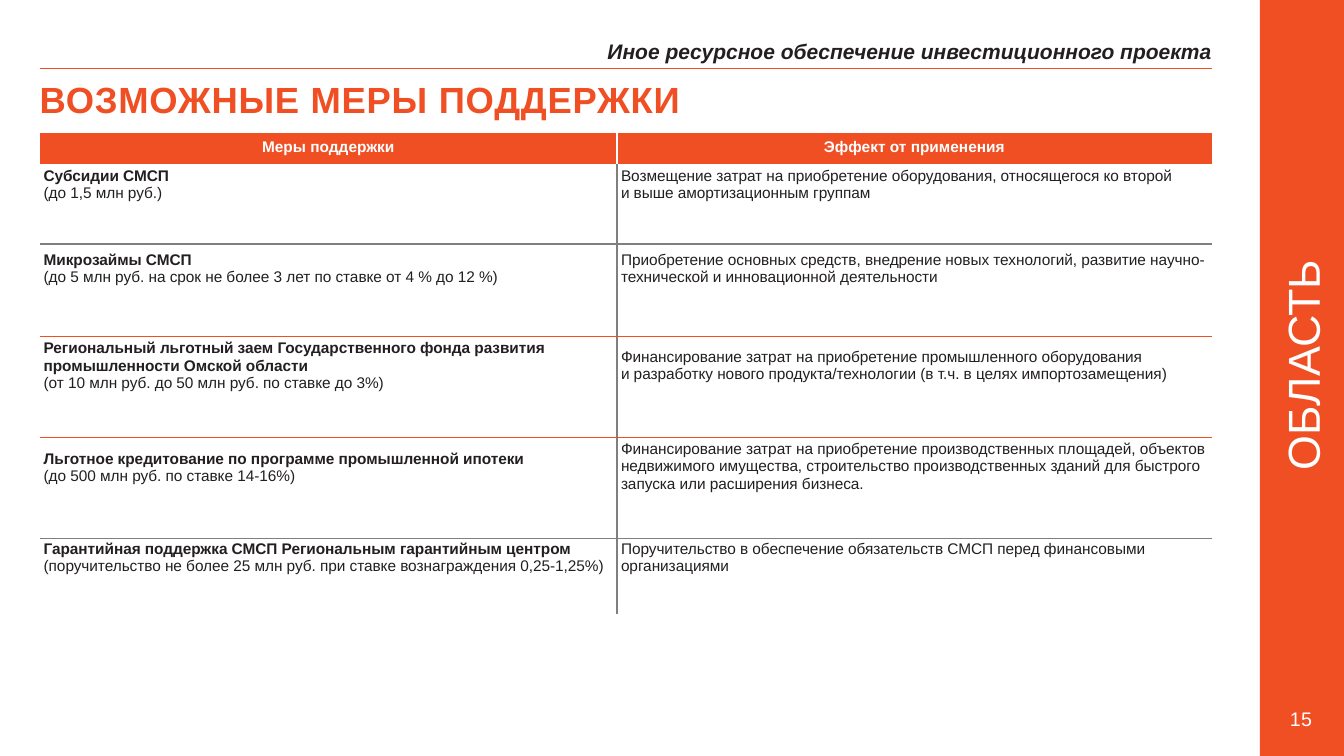
"""Build the slide that lists support measures and their effects."""
from dataclasses import dataclass

from lxml import etree
from pptx import Presentation
from pptx.dml.color import RGBColor
from pptx.enum.shapes import MSO_CONNECTOR, MSO_SHAPE
from pptx.enum.text import MSO_ANCHOR, PP_ALIGN
from pptx.oxml.ns import qn
from pptx.util import Cm, Pt

STRAIGHT = MSO_CONNECTOR.STRAIGHT
RECTANGLE = MSO_SHAPE.RECTANGLE
TOP, MIDDLE = MSO_ANCHOR.TOP, MSO_ANCHOR.MIDDLE
LEFT, CENTER = PP_ALIGN.LEFT, PP_ALIGN.CENTER

COLORS = {"orange": "F04E23", "ink": "231F20", "white": "FFFFFF", "gray": "7F7F7F"}
FONT = "Arial"
MARGIN_LEFT = 1.0
CONTENT_WIDTH = 29.54
COLUMN_WIDTHS = (14.55, 14.99)
HEADINGS = ("Меры поддержки", "Эффект от применения")
HEADING_HEIGHT = 0.79


@dataclass(frozen=True)
class Style:
    size: float
    color: str
    bold: bool = False
    italic: bool = False
    spacing: float = 0
    align: PP_ALIGN = LEFT


@dataclass(frozen=True)
class Label:
    text: str
    left: float
    top: float
    width: float
    height: float
    style: Style
    rotation: float = 0


@dataclass(frozen=True)
class Measure:
    name: str
    terms: str
    effect: tuple[str, ...]
    height: float
    name_inset: float
    effect_inset: float
    rule: str | None


TITLE_STYLE = Style(26, "orange", bold=True, spacing=0.5)
HEADING_STYLE = Style(11, "white", bold=True, align=CENTER)
NAME_STYLE = Style(11, "ink", bold=True, spacing=-0.05)
BODY_STYLE = Style(11, "ink", spacing=-0.05)

LABELS = (
    Label("Иное ресурсное обеспечение инвестиционного проекта",
          15.31, 0.97, 15.4, 0.7, Style(15, "ink", bold=True, italic=True)),
    Label("ОБЛАСТЬ", 29.81, 8.55, 6, 1.3, Style(32, "white", align=CENTER), 270),
    Label("15", 32.51, 17.81, 0.8, 0.7, Style(14, "white", spacing=0.2)),
)

MEASURES = (
    Measure("Субсидии СМСП", "(до 1,5 млн руб.)",
            ("Возмещение затрат на приобретение оборудования, относящегося ко второй",
             "и выше амортизационным группам"),
            2.01, 0.08, 0.08, "gray"),
    Measure("Микрозаймы СМСП",
            "(до 5 млн руб. на срок не более 3 лет по ставке от 4 % до 12 %)",
            ("Приобретение основных средств, внедрение новых технологий, развитие "
             "научно-технической и инновационной деятельности",),
            2.34, 0.18, 0.18, "orange"),
    Measure("Региональный льготный заем Государственного фонда развития "
            "промышленности Омской области",
            "(от 10 млн руб. до 50 млн руб. по ставке до 3%)",
            ("Финансирование затрат на приобретение промышленного оборудования",
             "и разработку нового продукта/технологии (в т.ч. в целях импортозамещения)"),
            2.54, 0.08, 0.3, "orange"),
    Measure("Льготное кредитование по программе промышленной ипотеки",
            "(до 500 млн руб. по ставке 14-16%)",
            ("Финансирование затрат на приобретение производственных площадей, "
             "объектов недвижимого имущества, строительство производственных зданий "
             "для быстрого запуска или расширения бизнеса.",),
            2.54, 0.33, 0.08, "gray"),
    Measure("Гарантийная поддержка СМСП Региональным гарантийным центром",
            "(поручительство не более 25 млн руб. при ставке вознаграждения 0,25-1,25%)",
            ("Поручительство в обеспечение обязательств СМСП перед финансовыми "
             "организациями",),
            1.9, 0.05, 0.05, None),
)


def rgb(name: str) -> RGBColor:
    return RGBColor.from_string(COLORS[name])


def format_paragraph(paragraph, style: Style) -> None:
    paragraph.alignment = style.align
    for run in paragraph.runs:
        run.font.name = FONT
        run.font.size = Pt(style.size)
        run.font.bold = style.bold
        run.font.italic = style.italic
        run.font.color.rgb = rgb(style.color)
        if style.spacing:
            run.font._element.set("spc", str(round(style.spacing * 100)))


def fill_frame(frame, text: str, style: Style, anchor: MSO_ANCHOR) -> None:
    frame.text = text
    frame.word_wrap = True
    frame.vertical_anchor = anchor
    frame.margin_left = frame.margin_right = 0
    frame.margin_top = frame.margin_bottom = 0
    format_paragraph(frame.paragraphs[0], style)


def add_label(slide, label: Label) -> None:
    box = slide.shapes.add_textbox(
        Cm(label.left), Cm(label.top), Cm(label.width), Cm(label.height))
    box.rotation = label.rotation
    fill_frame(box.text_frame, label.text, label.style, MIDDLE if label.rotation else TOP)


def add_title(slide) -> None:
    title = slide.shapes.title
    title.left, title.top = Cm(MARGIN_LEFT), Cm(1.95)
    title.width, title.height = Cm(17), Cm(1.17)
    fill_frame(title.text_frame, "ВОЗМОЖНЫЕ МЕРЫ ПОДДЕРЖКИ", TITLE_STYLE, TOP)


def add_sidebar(slide) -> None:
    sidebar = slide.shapes.add_shape(RECTANGLE, Cm(31.75), 0, Cm(2.12), Cm(19.05))
    sidebar.shadow.inherit = False
    sidebar.fill.solid()
    sidebar.fill.fore_color.rgb = rgb("orange")
    sidebar.line.fill.background()


def add_header_rule(slide) -> None:
    rule = slide.shapes.add_connector(
        STRAIGHT, Cm(MARGIN_LEFT), Cm(1.73), Cm(MARGIN_LEFT + CONTENT_WIDTH), Cm(1.73))
    rule.line.color.rgb = rgb("orange")
    rule.line.width = Pt(0.5)
    etree.SubElement(rule._element.spPr, qn("a:effectLst"))


def set_borders(cell, edges: dict[str, str | None]) -> None:
    properties = cell._tc.get_or_add_tcPr()
    for side in "LRTB":
        color = edges.get(side)
        line = etree.SubElement(properties, qn(f"a:ln{side}"), w=str(Pt(1)))
        if color:
            solid = etree.SubElement(line, qn("a:solidFill"))
            etree.SubElement(solid, qn("a:srgbClr"), val=COLORS[color])
        else:
            etree.SubElement(line, qn("a:noFill"))


def fill_cell(cell, lines: tuple[str, ...], styles: tuple[Style, ...],
              inset: float, edges: dict[str, str | None], fill: str | None) -> None:
    cell.text_frame.text = "\n".join(lines)
    for paragraph, style in zip(cell.text_frame.paragraphs, styles):
        format_paragraph(paragraph, style)
    cell.vertical_anchor = TOP
    cell.margin_left = Cm(0 if fill else 0.1)
    cell.margin_right = cell.margin_bottom = 0
    cell.margin_top = Cm(inset)
    set_borders(cell, edges)
    if fill:
        cell.fill.solid()
        cell.fill.fore_color.rgb = rgb(fill)
    else:
        cell.fill.background()


def add_measures_table(slide) -> None:
    heights = [HEADING_HEIGHT] + [measure.height for measure in MEASURES]
    table = slide.shapes.add_table(
        len(heights), len(COLUMN_WIDTHS), Cm(MARGIN_LEFT), Cm(3.35),
        Cm(CONTENT_WIDTH), Cm(sum(heights))).table
    table.first_row = table.horz_banding = False
    for column, width in zip(table.columns, COLUMN_WIDTHS):
        column.width = Cm(width)
    for row, height in zip(table.rows, heights):
        row.height = Cm(height)
    for index, (heading, inner) in enumerate(zip(HEADINGS, "RL")):
        fill_cell(table.cell(0, index), (heading,), (HEADING_STYLE,), 0.15,
                  {inner: "white"}, "orange")
    rule_above = None
    for index, measure in enumerate(MEASURES, start=1):
        rules = {"T": rule_above, "B": measure.rule}
        fill_cell(table.cell(index, 0), (measure.name, measure.terms),
                  (NAME_STYLE, BODY_STYLE), measure.name_inset, rules | {"R": "gray"}, None)
        fill_cell(table.cell(index, 1), measure.effect, (BODY_STYLE,) * len(measure.effect),
                  measure.effect_inset, rules | {"L": "gray"}, None)
        rule_above = measure.rule


def main() -> None:
    deck = Presentation()
    deck.slide_width, deck.slide_height = Cm(33.87), Cm(19.05)
    slide = deck.slides.add_slide(deck.slide_layouts[5])
    add_sidebar(slide)
    add_title(slide)
    add_header_rule(slide)
    add_measures_table(slide)
    for label in LABELS:
        add_label(slide, label)
    deck.save("out.pptx")


if __name__ == "__main__":
    main()
